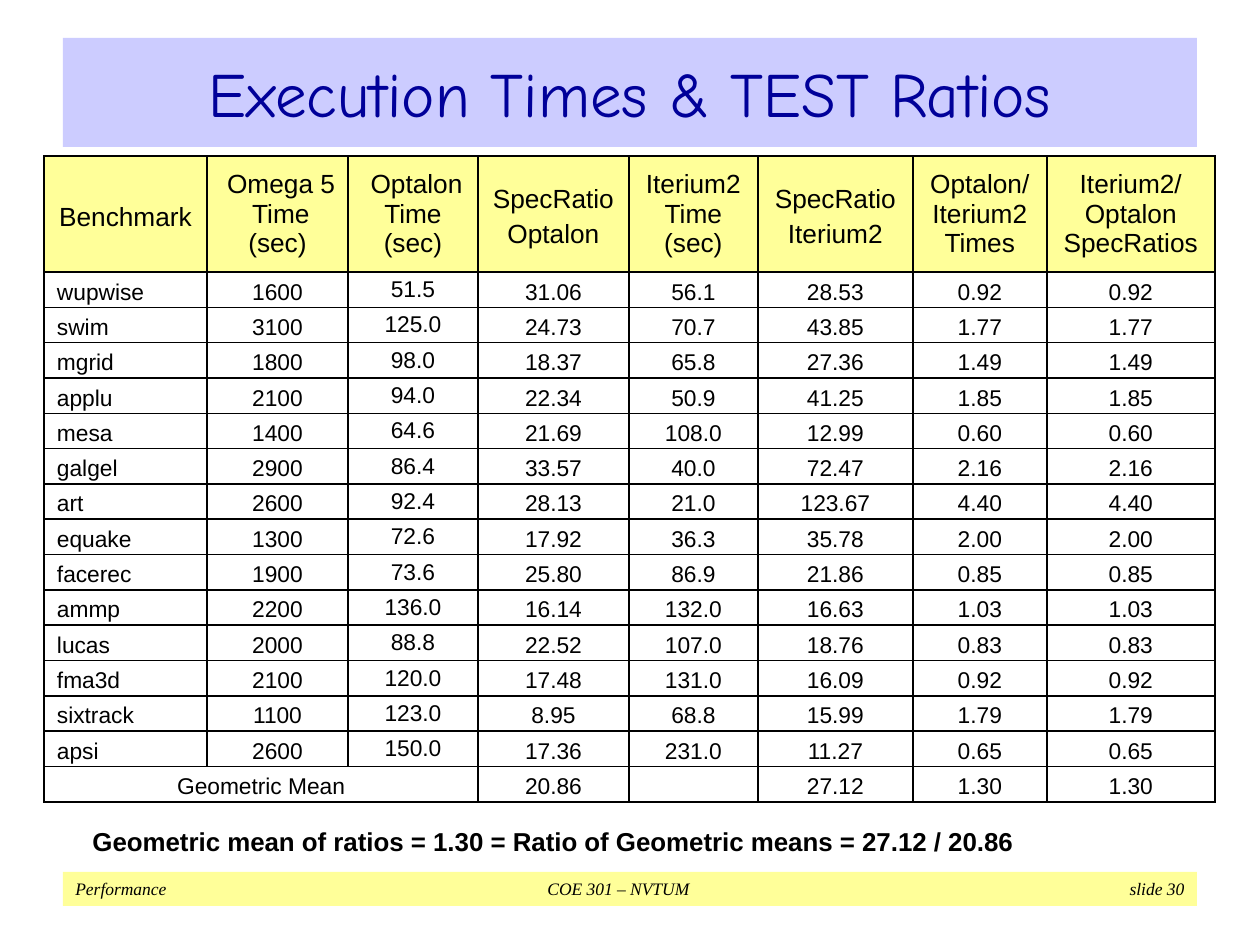
from dataclasses import dataclass
from typing import NamedTuple

from lxml.etree import SubElement
from pptx import Presentation
from pptx.dml.color import RGBColor
from pptx.enum.shapes import MSO_SHAPE as Shape
from pptx.enum.text import MSO_ANCHOR as Anchor, PP_ALIGN as Align
from pptx.oxml.ns import qn
from pptx.util import Emu, Pt

EMU_PER_PX = 914400 / 126
COLORS = {
    "title_band": "CCCCFF",
    "title": "000099",
    "highlight": "FFFF99",
    "ink": "000000",
}


class Box(NamedTuple):
    left: int
    top: int
    width: int
    height: int


@dataclass(frozen=True)
class Style:
    size: float
    font: str = "Arial"
    color: str = "ink"
    bold: bool = False
    italic: bool = False


@dataclass(frozen=True)
class Heading:
    lines: tuple[str, ...]
    spacing: float = 1.0


TITLE = Style(36, "Comic Neue", "title")
HEADING = Style(15)
BODY = Style(13)
SUMMARY = Style(14.8, bold=True)
FOOTER = Style(10, "Times New Roman", italic=True)

TABLE_BOX = Box(44, 156, 1171, 646)
COLUMN_WIDTHS = (163, 141, 130, 151, 129, 155, 134, 168)
HEADER_HEIGHT = 116
OPTALON_TIME = 2  # the one column set in single line spacing

HEADINGS = (
    Heading(("Benchmark",), 1.2),
    Heading((" Omega 5", " Time", "(sec)")),
    Heading((" Optalon", "Time", "(sec)")),
    Heading(("SpecRatio", "Optalon"), 1.2),
    Heading(("Iterium2", "Time", "(sec)")),
    Heading(("SpecRatio", "Iterium2"), 1.2),
    Heading(("Optalon/", "Iterium2", "Times")),
    Heading(("Iterium2/", "Optalon", "SpecRatios")),
)
# The two comparison columns hold the same ratio, so it is listed once
BENCHMARKS = (
    ("wupwise", "1600", "51.5", "31.06", "56.1", "28.53", "0.92"),
    ("swim", "3100", "125.0", "24.73", "70.7", "43.85", "1.77"),
    ("mgrid", "1800", "98.0", "18.37", "65.8", "27.36", "1.49"),
    ("applu", "2100", "94.0", "22.34", "50.9", "41.25", "1.85"),
    ("mesa", "1400", "64.6", "21.69", "108.0", "12.99", "0.60"),
    ("galgel", "2900", "86.4", "33.57", "40.0", "72.47", "2.16"),
    ("art", "2600", "92.4", "28.13", "21.0", "123.67", "4.40"),
    ("equake", "1300", "72.6", "17.92", "36.3", "35.78", "2.00"),
    ("facerec", "1900", "73.6", "25.80", "86.9", "21.86", "0.85"),
    ("ammp", "2200", "136.0", "16.14", "132.0", "16.63", "1.03"),
    ("lucas", "2000", "88.8", "22.52", "107.0", "18.76", "0.83"),
    ("fma3d", "2100", "120.0", "17.48", "131.0", "16.09", "0.92"),
    ("sixtrack", "1100", "123.0", "8.95", "68.8", "15.99", "1.79"),
    ("apsi", "2600", "150.0", "17.36", "231.0", "11.27", "0.65"),
    ("Geometric Mean", "", "", "20.86", "", "27.12", "1.30"),
)


def px(length: float) -> Emu:
    return Emu(round(length * EMU_PER_PX))


def rgb(name: str) -> RGBColor:
    return RGBColor.from_string(COLORS[name])


def place(box: Box) -> tuple[Emu, ...]:
    return tuple(px(length) for length in box)


def add_run(paragraph, text: str, style: Style) -> None:
    run = paragraph.add_run()
    run.text = text
    run.font.name = style.font
    run.font.size = Pt(style.size)
    run.font.bold = style.bold
    run.font.italic = style.italic
    run.font.color.rgb = rgb(style.color)


def add_band(slide, box: Box, fill: str, align: Align):
    """Draw a plain filled band and return its first paragraph."""
    band = slide.shapes.add_shape(Shape.RECTANGLE, *place(box))
    band.shadow.inherit = False
    band.fill.solid()
    band.fill.fore_color.rgb = rgb(fill)
    band.line.fill.background()
    band.text_frame.vertical_anchor = Anchor.MIDDLE
    band.text_frame.word_wrap = True
    paragraph = band.text_frame.paragraphs[0]
    paragraph.alignment = align
    return paragraph


def add_tab_stops(paragraph, stops: tuple[tuple[int, str], ...]) -> None:
    tabs = SubElement(paragraph._p.get_or_add_pPr(), qn("a:tabLst"))
    for position, align in stops:
        SubElement(tabs, qn("a:tab"), pos=str(px(position)), algn=align)


def add_borders(cell) -> None:
    properties = cell._tc.get_or_add_tcPr()
    for side in ("a:lnL", "a:lnR", "a:lnT", "a:lnB"):
        line = SubElement(properties, qn(side), w=str(Pt(1)))
        fill = SubElement(line, qn("a:solidFill"))
        SubElement(fill, qn("a:srgbClr"), val=COLORS["ink"])


def fill_cell(cell, lines: tuple[str, ...], style: Style, spacing: float,
              align: Align, side_margin: int, fill: str | None = None) -> None:
    add_borders(cell)
    if fill:
        cell.fill.solid()
        cell.fill.fore_color.rgb = rgb(fill)
    else:
        cell.fill.background()
    cell.vertical_anchor = Anchor.MIDDLE
    cell.margin_left = cell.margin_right = px(side_margin)
    cell.margin_top = cell.margin_bottom = 0
    for index, text in enumerate(lines):
        frame = cell.text_frame
        paragraph = frame.add_paragraph() if index else frame.paragraphs[0]
        paragraph.alignment = align
        paragraph.line_spacing = spacing
        if text:
            add_run(paragraph, text, style)
        else:
            # Keep an empty cell from stretching its row
            SubElement(paragraph._p, qn("a:endParaRPr"), sz=str(style.size * 100))


def add_benchmark_table(slide) -> None:
    count = len(BENCHMARKS)
    table = slide.shapes.add_table(
        count + 1, len(HEADINGS), *place(TABLE_BOX)).table
    table.first_row = table.horz_banding = False
    for column, width in zip(table.columns, COLUMN_WIDTHS):
        column.width = px(width)
    table.rows[0].height = px(HEADER_HEIGHT)
    row_height = (TABLE_BOX.height - HEADER_HEIGHT) / count

    for column, heading in enumerate(HEADINGS):
        fill_cell(table.cell(0, column), heading.lines, HEADING,
                  heading.spacing, Align.CENTER, 0, "highlight")
    for row, values in enumerate(BENCHMARKS, start=1):
        table.rows[row].height = px(row_height)
        for column, value in enumerate((*values, values[-1])):
            is_name = column == 0 and row < count
            fill_cell(table.cell(row, column), (value,), BODY,
                      1.0 if column == OPTALON_TIME else 1.2,
                      Align.LEFT if is_name else Align.CENTER, 13)
    table.cell(count, 0).merge(table.cell(count, 2))


def main() -> None:
    deck = Presentation()
    deck.slide_width, deck.slide_height = px(1260), px(945)
    slide = deck.slides.add_slide(deck.slide_layouts[6])

    # Footer
    footer = add_band(slide, Box(63, 872, 1134, 34), "highlight", Align.LEFT)
    add_tab_stops(footer, ((543, "ctr"), (1109, "r")))
    add_run(footer, "Performance\tCOE 301 – NVTUM\t slide 30", FOOTER)

    # Execution times and ratios
    add_benchmark_table(slide)

    # Summary below the table
    summary = slide.shapes.add_textbox(*place(Box(80, 819, 1100, 44))).text_frame
    summary.word_wrap = True
    add_run(summary.paragraphs[0],
            "Geometric mean of ratios = 1.30 = Ratio of Geometric means"
            " = 27.12 / 20.86", SUMMARY)

    # Title
    title = add_band(slide, Box(63, 38, 1134, 109), "title_band", Align.CENTER)
    add_run(title, "Execution Times & TEST Ratios", TITLE)

    deck.save("out.pptx")


if __name__ == "__main__":
    main()
